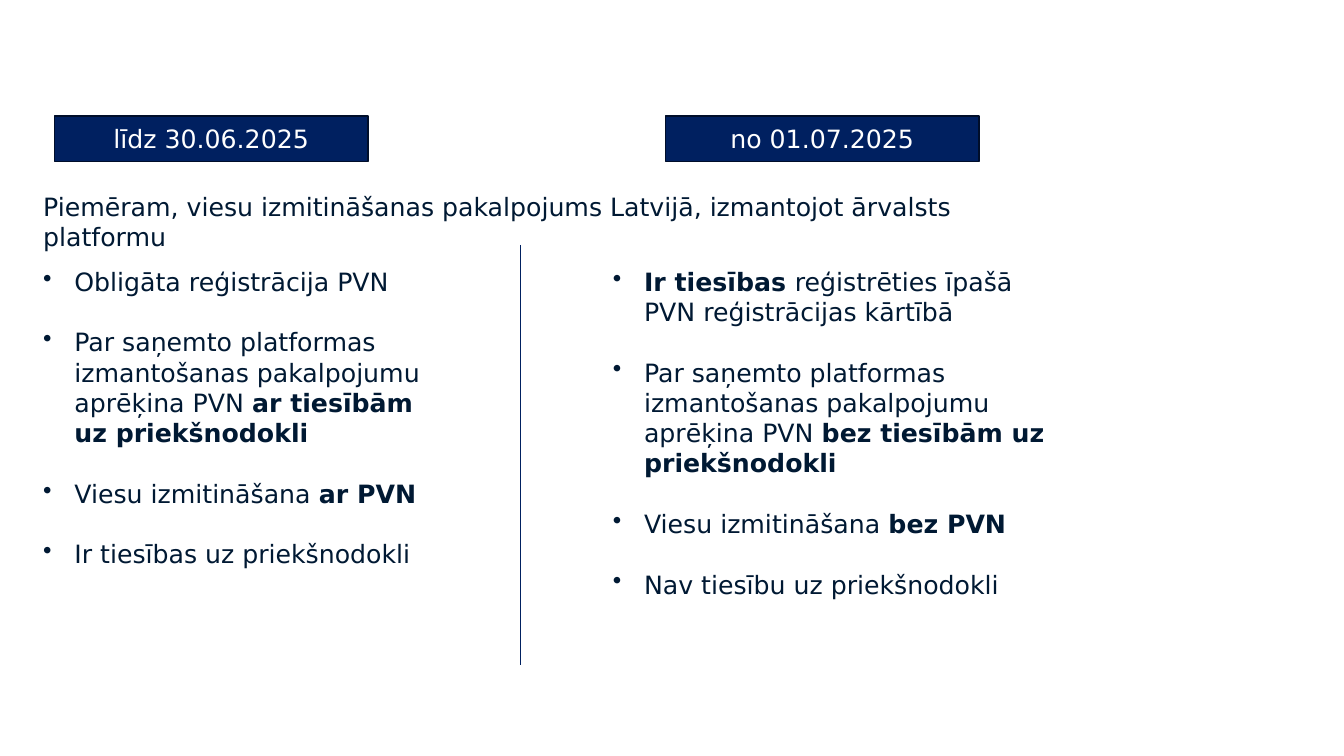
from dataclasses import dataclass

from lxml import etree
from pptx import Presentation
from pptx.dml.color import RGBColor
from pptx.enum.shapes import MSO_CONNECTOR, MSO_SHAPE
from pptx.enum.text import MSO_ANCHOR, PP_ALIGN
from pptx.oxml.ns import qn
from pptx.slide import Slide
from pptx.text.text import TextFrame, _Paragraph
from pptx.util import Inches, Pt

RECTANGLE = MSO_SHAPE.RECTANGLE
STRAIGHT = MSO_CONNECTOR.STRAIGHT
MIDDLE = MSO_ANCHOR.MIDDLE
CENTER = PP_ALIGN.CENTER

NAVY = RGBColor(0x00, 0x20, 0x60)
BORDER = RGBColor(0x00, 0x0E, 0x2A)
INK = RGBColor(0x00, 0x19, 0x33)
WHITE = RGBColor(0xFF, 0xFF, 0xFF)

FONT = "DejaVu Sans"
FONT_SIZE = Pt(18)
BULLET_GAP = Pt(21.7)
BULLET_INDENT = Inches(0.31)


@dataclass(frozen=True)
class Run:
    text: str
    bold: bool = False


@dataclass(frozen=True)
class Period:
    label: str
    label_left: float
    list_left: float
    list_width: float
    list_height: float
    points: tuple[tuple[Run, ...], ...]


INTRO = "Piemēram, viesu izmitināšanas pakalpojums Latvijā, izmantojot ārvalsts platformu"
PLATFORM = Run("Par saņemto platformas izmantošanas pakalpojumu aprēķina PVN ")
LODGING = Run("Viesu izmitināšana ")

PERIODS = (
    Period("līdz 30.06.2025", 0.54, 0.33, 4.18, 3.13, (
        (Run("Obligāta reģistrācija PVN"),),
        (PLATFORM, Run("ar tiesībām uz priekšnodokli", True)),
        (LODGING, Run("ar PVN", True)),
        (Run("Ir tiesības uz priekšnodokli"),),
    )),
    Period("no 01.07.2025", 6.6, 5.98, 4.56, 3.43, (
        (Run("Ir tiesības ", True), Run("reģistrēties īpašā PVN reģistrācijas kārtībā")),
        (PLATFORM, Run("bez tiesībām uz priekšnodokli", True)),
        (LODGING, Run("bez PVN", True)),
        (Run("Nav tiesību uz priekšnodokli"),),
    )),
)


def style_font(paragraph: _Paragraph, color: RGBColor) -> None:
    paragraph.font.name = FONT
    paragraph.font.size = FONT_SIZE
    paragraph.font.color.rgb = color


def add_bullet(paragraph: _Paragraph) -> None:
    properties = paragraph._p.get_or_add_pPr()
    properties.set("marL", str(BULLET_INDENT))
    properties.set("indent", str(-BULLET_INDENT))
    etree.SubElement(properties, qn("a:buChar")).set("char", "•")


def add_text_frame(slide: Slide, left: float, top: float, width: float, height: float) -> TextFrame:
    box = slide.shapes.add_textbox(Inches(left), Inches(top), Inches(width), Inches(height))
    box.text_frame.word_wrap = True
    return box.text_frame


def add_divider(slide: Slide) -> None:
    divider = slide.shapes.add_connector(
        STRAIGHT, Inches(5.16), Inches(2.43), Inches(5.16), Inches(6.6))
    divider.line.color.rgb = NAVY
    divider.line.width = Pt(0.5)
    etree.SubElement(divider._element.spPr, qn("a:effectLst"))


def add_label(slide: Slide, period: Period) -> None:
    shape = slide.shapes.add_shape(
        RECTANGLE, Inches(period.label_left), Inches(1.15), Inches(3.11), Inches(0.45))
    shape.shadow.inherit = False
    shape.fill.solid()
    shape.fill.fore_color.rgb = NAVY
    shape.line.color.rgb = BORDER
    shape.line.width = Pt(1)
    shape.text_frame.vertical_anchor = MIDDLE
    paragraph = shape.text_frame.paragraphs[0]
    paragraph.text = period.label
    paragraph.alignment = CENTER
    style_font(paragraph, WHITE)


def add_intro(slide: Slide) -> None:
    paragraph = add_text_frame(slide, 0.33, 1.85, 10.1, 0.71).paragraphs[0]
    paragraph.text = INTRO
    style_font(paragraph, INK)


def add_points(slide: Slide, period: Period) -> None:
    frame = add_text_frame(slide, period.list_left, 2.59, period.list_width, period.list_height)
    for index, point in enumerate(period.points):
        paragraph = frame.add_paragraph() if index else frame.paragraphs[0]
        add_bullet(paragraph)
        if index:
            paragraph.space_before = BULLET_GAP
        style_font(paragraph, INK)
        for part in point:
            run = paragraph.add_run()
            run.text = part.text
            run.font.bold = part.bold


def main() -> None:
    presentation = Presentation()
    presentation.slide_width = Inches(13.33)
    presentation.slide_height = Inches(7.5)
    slide = presentation.slides.add_slide(presentation.slide_layouts[6])
    add_divider(slide)
    for period in PERIODS:
        add_label(slide, period)
    add_intro(slide)
    for period in PERIODS:
        add_points(slide, period)
    presentation.save("out.pptx")


if __name__ == "__main__":
    main()
